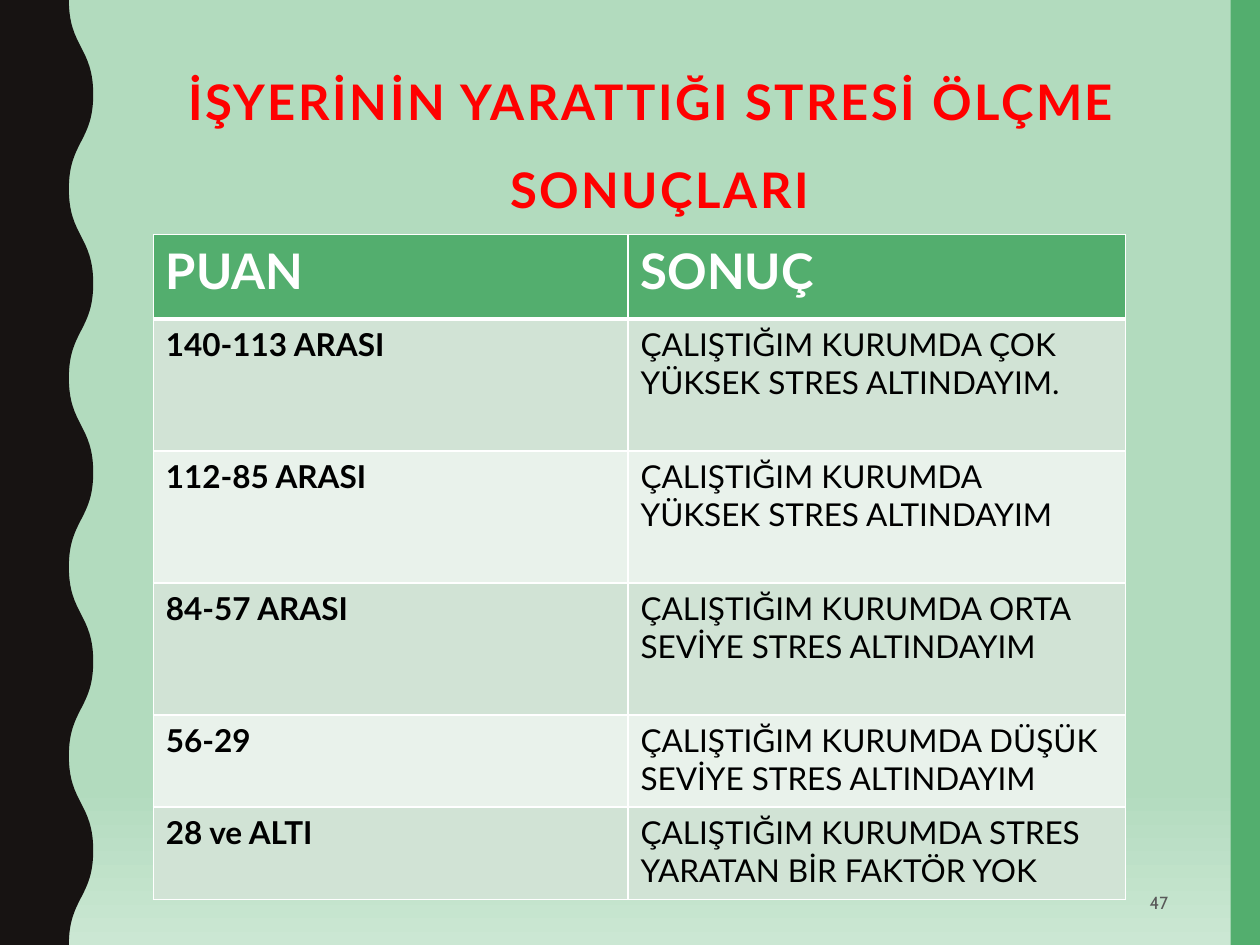
import dataclasses

import pptx
import pptx.dml.color
import pptx.enum.shapes
import pptx.enum.text
import pptx.oxml
import pptx.oxml.ns
import pptx.util

Cm = pptx.util.Cm
Pt = pptx.util.Pt
ALIGN = pptx.enum.text.PP_ALIGN
ANCHOR = pptx.enum.text.MSO_ANCHOR

GREEN, DARK, WHITE = "53AE6E", "171312", "FFFFFF"
BANDS = ("D1E3D5", "E9F2EB")
WAVE_COUNT = 10


@dataclasses.dataclass
class TextStyle:
    size: float
    color: str
    font: str = "Lato"
    bold: bool = False
    align: ALIGN = ALIGN.LEFT


@dataclasses.dataclass
class ResultRow:
    score: str
    result: str
    height: float


HEADER = ResultRow("PUAN", "SONUÇ", 1.7)
RESULTS = [
    ResultRow("140-113 ARASI", "ÇALIŞTIĞIM KURUMDA ÇOK YÜKSEK STRES ALTINDAYIM.", 2.66),
    ResultRow("112-85 ARASI", "ÇALIŞTIĞIM KURUMDA \vYÜKSEK STRES ALTINDAYIM", 2.66),
    ResultRow("84-57 ARASI", "ÇALIŞTIĞIM KURUMDA ORTA SEVİYE STRES ALTINDAYIM", 2.66),
    ResultRow("56-29", "ÇALIŞTIĞIM KURUMDA DÜŞÜK SEVİYE STRES ALTINDAYIM", 1.86),
    ResultRow("28 ve ALTI", "ÇALIŞTIĞIM KURUMDA STRES YARATAN BİR FAKTÖR YOK", 1.86),
]


def rgb(value: str) -> pptx.dml.color.RGBColor:
    return pptx.dml.color.RGBColor.from_string(value)


def fill_plain(shape, color: str) -> None:
    shape.fill.solid()
    shape.fill.fore_color.rgb = rgb(color)
    shape.line.fill.background()
    shape.shadow.inherit = False


def write_text(text_frame, text: str, style: TextStyle) -> None:
    text_frame.text = text
    text_frame.word_wrap = True
    paragraph = text_frame.paragraphs[0]
    paragraph.alignment = style.align
    for run in paragraph.runs:
        font = run.font
        font.name, font.size, font.bold = style.font, Pt(style.size), style.bold
        font.color.rgb = rgb(style.color)


def set_background(slide) -> None:
    fill = slide.background.fill
    fill.gradient()
    fill.gradient_angle = 270
    for stop, position, color in zip(fill.gradient_stops, (0.83, 1), ("B2DBBE", "CBE7D3")):
        stop.position = position
        stop.color.rgb = rgb(color)


def add_wavy_edge(slide, height: int) -> None:
    """Draw the dark left band, whose right side swings in equal S-curves."""
    sides = (Cm(1.39), Cm(1.88))
    half_wave = height // WAVE_COUNT
    turns = [(sides[index % 2], index * half_wave) for index in range(WAVE_COUNT + 1)]
    builder = slide.shapes.build_freeform(*turns[0])
    builder.add_line_segments(turns[1:] + [(0, height), (0, 0)], close=True)
    shape = builder.convert_to_shape()
    fill_plain(shape, DARK)
    lines = shape._element.findall(".//" + pptx.oxml.ns.qn("a:lnTo"))
    for line, (start_x, start_y), (end_x, end_y) in zip(lines, turns, turns[1:]):
        middle = (start_y + end_y) // 2
        controls = ((start_x, middle), (end_x, middle), (end_x, end_y))
        points = "".join(f'<a:pt x="{x}" y="{y}"/>' for x, y in controls)
        curve = pptx.oxml.parse_xml(
            f'<a:cubicBezTo {pptx.oxml.ns.nsdecls("a")}>{points}</a:cubicBezTo>')
        line.getparent().replace(line, curve)


def add_title(slide) -> None:
    title = slide.shapes.title
    title.left, title.top, title.width, title.height = Cm(2.1), Cm(0.72), Cm(22.4), Cm(3.81)
    write_text(title.text_frame, "İŞYERİNİN YARATTIĞI STRESİ ÖLÇME \vSONUÇLARI",
               TextStyle(28, "FF0000", bold=True, align=ALIGN.CENTER))
    title.text_frame.auto_size = pptx.enum.text.MSO_AUTO_SIZE.NONE
    title.text_frame.vertical_anchor = ANCHOR.TOP
    paragraph = title.text_frame.paragraphs[0]
    paragraph.line_spacing = 1.5
    for run in paragraph.runs:
        run._r.get_or_add_rPr().set("spc", "150")


def add_slide_number(slide) -> None:
    box = slide.shapes.add_textbox(Cm(17.93), Cm(17.7), Cm(5.87), Cm(0.97))
    write_text(box.text_frame, "47", TextStyle(10, "595959", "Cabin", align=ALIGN.RIGHT))
    box.text_frame.vertical_anchor = ANCHOR.MIDDLE


def set_borders(cell, widths: dict[str, float]) -> None:
    properties = cell._tc.get_or_add_tcPr()
    for side, width in widths.items():
        properties.append(pptx.oxml.parse_xml(
            f'<a:ln{side} {pptx.oxml.ns.nsdecls("a")} w="{Pt(width)}">'
            f'<a:solidFill><a:srgbClr val="{WHITE}"/></a:solidFill></a:ln{side}>'))


def add_results_table(slide) -> None:
    rows = [HEADER, *RESULTS]
    widths = (9.57, 10.03)
    table = slide.shapes.add_table(
        len(rows), len(widths), Cm(3.09), Cm(4.73),
        Cm(sum(widths)), Cm(sum(row.height for row in rows))).table
    for column, width in zip(table.columns, widths):
        column.width = Cm(width)
    for index, row in enumerate(rows):
        table.rows[index].height = Cm(row.height)
        is_header = index == 0
        borders = {"L": 1, "R": 1, "T": 3 if index == 1 else 1, "B": 3 if is_header else 1}
        for column, text in enumerate((row.score, row.result)):
            cell = table.cell(index, column)
            set_borders(cell, borders)
            cell.fill.solid()
            cell.fill.fore_color.rgb = rgb(GREEN if is_header else BANDS[(index - 1) % 2])
            style = (TextStyle(28, WHITE, bold=True) if is_header
                     else TextStyle(18, "000000", bold=column == 0))
            write_text(cell.text_frame, text, style)


def main() -> None:
    presentation = pptx.Presentation()
    presentation.slide_width, presentation.slide_height = Cm(25.4), Cm(19.05)
    slide = presentation.slides.add_slide(presentation.slide_layouts[5])
    set_background(slide)
    edge_width = Cm(0.59)
    right_edge = slide.shapes.add_shape(
        pptx.enum.shapes.MSO_SHAPE.RECTANGLE,
        presentation.slide_width - edge_width, 0, edge_width, presentation.slide_height)
    fill_plain(right_edge, GREEN)
    add_wavy_edge(slide, presentation.slide_height)
    add_slide_number(slide)
    add_title(slide)
    add_results_table(slide)
    presentation.save("out.pptx")


if __name__ == "__main__":
    main()
